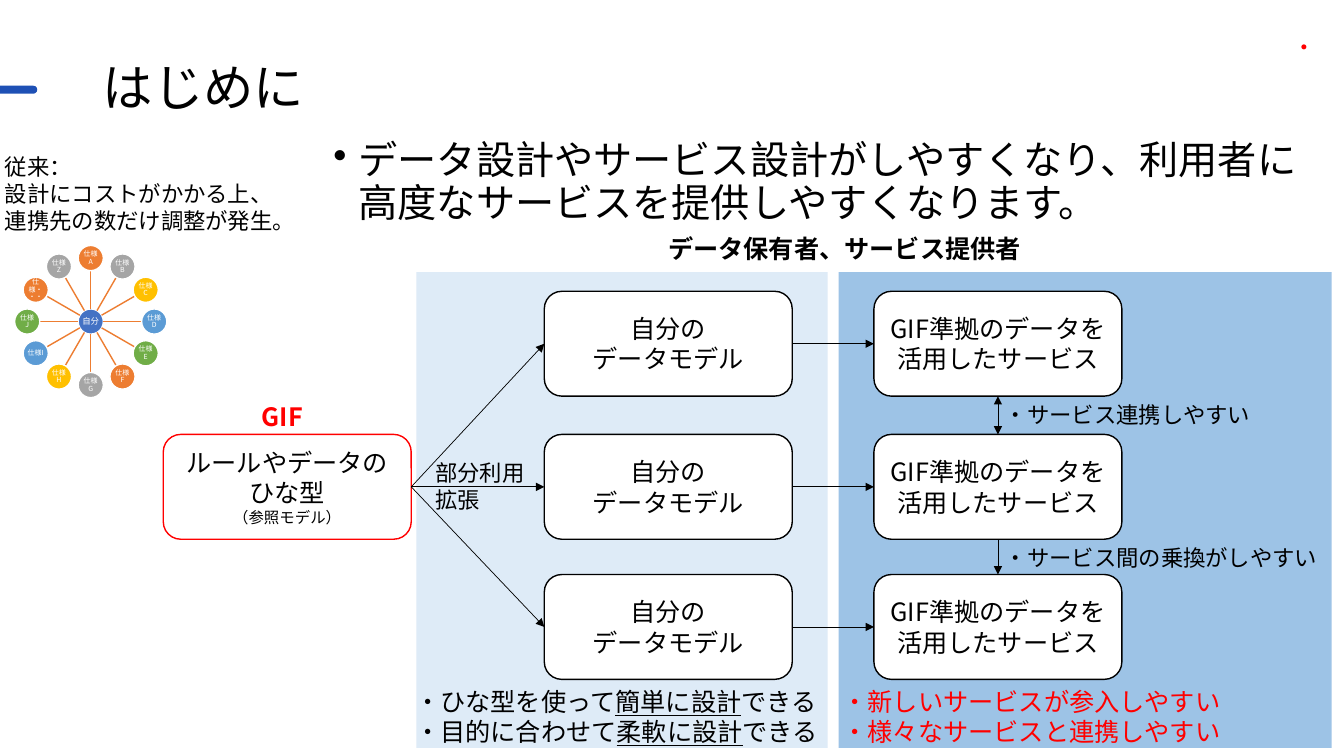
import math
from dataclasses import dataclass

from lxml import etree
from pptx import Presentation
from pptx import util as u
from pptx.dml.color import RGBColor
from pptx.enum import shapes, text
from pptx.oxml.ns import qn

CELL = u.Inches(0.1)
COLUMNS, ROWS = 133.33, 75
SANS, TITLE_FONT = "Noto Sans CJK JP", "Roboto"
COLORS = {
    "black": "000000", "white": "FFFFFF", "red": "FF0000", "accent": "1E50B5",
    "pale": "DEEBF7", "sky": "9DC3E6", "hub": "4472C4", "orange": "ED7D31",
    "gray": "A5A5A5", "gold": "FFC000", "blue": "5B9BD5", "green": "70AD47",
}
SPECS = [
    ("A", "orange"), ("B", "gray"), ("C", "gold"), ("D", "blue"), ("E", "green"), ("F", "orange"),
    ("G", "gray"), ("H", "gold"), ("I", "blue"), ("J", "green"), ("・・・", "orange"), ("Z", "gray"),
]
NODE_WIDTH, NODE_HEIGHT = 24.6, 10.4
NODE_TOPS = (1.9, 16.1, 30)


@dataclass
class Box:
    """Rectangle measured in grid cells."""
    left: float
    top: float
    width: float
    height: float

    def inner(self, left, top, width, height):
        """Return a box offset from this one's corner."""
        return Box(self.left + left, self.top + top, width, height)

    def lengths(self):
        """Return the four lengths in slide units."""
        return [round(value * CELL) for value in (self.left, self.top, self.width, self.height)]


def rgb(name):
    """Look up a palette colour."""
    return RGBColor.from_string(COLORS[name])


def write(shape, paragraphs, size, color="black", bold=False, align=None, font=SANS):
    """Fill a shape with paragraphs; every second run of one is underlined."""
    frame = shape.text_frame
    for index, pieces in enumerate(paragraphs):
        paragraph = frame.add_paragraph() if index else frame.paragraphs[0]
        paragraph.alignment = align
        for order, piece in enumerate(pieces):
            run = paragraph.add_run()
            run.text = piece
            run.font.size = u.Pt(size)
            run.font.bold = bold
            run.font.name = font
            run.font.color.rgb = rgb(color)
            if order % 2:
                run.font.underline = True
            latin = run.font._element.find(qn("a:latin"))
            east_asian = etree.Element(qn("a:ea"), typeface=SANS)
            latin.addnext(east_asian)


def add_label(slide, box, paragraphs, size, wrap=False, **style):
    """Add a text box."""
    label = slide.shapes.add_textbox(*box.lengths())
    label.text_frame.word_wrap = wrap
    if not wrap:
        label.text_frame.auto_size = text.MSO_AUTO_SIZE.SHAPE_TO_FIT_TEXT
    write(label, paragraphs, size, **style)
    return label


def add_block(slide, kind, box, fill, line=None):
    """Add a flat filled shape."""
    shape = slide.shapes.add_shape(kind, *box.lengths())
    shape.shadow.inherit = False
    shape.fill.solid()
    shape.fill.fore_color.rgb = rgb(fill)
    if line:
        shape.line.color.rgb = rgb(line)
        shape.line.width = u.Pt(1)
    else:
        shape.line.fill.background()
    shape.text_frame.word_wrap = True
    shape.text_frame.vertical_anchor = text.MSO_ANCHOR.MIDDLE
    return shape


def add_node(slide, box, lines, line="black"):
    """Add a rounded box with centred lines."""
    node = add_block(slide, shapes.MSO_SHAPE.ROUNDED_RECTANGLE, box, "white", line)
    write(node, [[words] for words in lines], 18, align=text.PP_ALIGN.CENTER)
    return node


def add_line(slide, ends, color, width):
    """Add a straight connector between two points."""
    points = [round(value * CELL) for value in ends]
    line = slide.shapes.add_connector(shapes.MSO_CONNECTOR.STRAIGHT, *points)
    line.line.color.rgb = rgb(color)
    line.line.width = u.Pt(width)
    etree.SubElement(line._element.spPr, qn("a:effectLst"))
    return line


def join(slide, start, start_site, end, end_site, both=False):
    """Link two nodes with an arrow."""
    arrow = add_line(slide, (0, 0, 1, 1), "black", 0.5)
    arrow.begin_connect(start, start_site)
    arrow.end_connect(end, end_site)
    outline = arrow.line._get_or_add_ln()
    for tag in ("a:headEnd", "a:tailEnd") if both else ("a:tailEnd",):
        etree.SubElement(outline, qn(tag), type="triangle")


def add_header(slide, box):
    """Place the title, its accent marks and the key message."""
    bar = add_block(slide, shapes.MSO_SHAPE.ROUNDED_RECTANGLE, box.inner(-1, 8.5, 4.7, 0.8), "accent")
    bar.adjustments[0] = 0.5
    add_block(slide, shapes.MSO_SHAPE.OVAL, box.inner(129.1, 4.4, 0.5, 0.5), "red")
    title = add_label(slide, box.inner(9.2, 5.7, 115, 6.5), [["はじめに"]], 36, wrap=True, font=TITLE_FONT)
    title.text_frame.vertical_anchor = text.MSO_ANCHOR.MIDDLE
    title.text_frame.paragraphs[0].line_spacing = 0.9
    message = add_label(slide, box.inner(32.1, 13.5, 98.8, 6.5), [[
        "データ設計やサービス設計がしやすくなり、利用者に高度なサービスを提供しやすくなります。"]], 28, wrap=True)
    paragraph = message.text_frame.paragraphs[0]
    paragraph.line_spacing = 0.9
    properties = paragraph._p.get_or_add_pPr()
    properties.set("marL", str(u.Inches(0.25)))
    properties.set("indent", str(-u.Inches(0.25)))
    etree.SubElement(properties, qn("a:buChar"), char="•")


def add_dot(slide, x, y, words, fill, size):
    """Add one small labelled circle around a centre."""
    dot = add_block(slide, shapes.MSO_SHAPE.OVAL, Box(x - 1.25, y - 1.25, 2.5, 2.5), fill, "white")
    frame = dot.text_frame
    frame.margin_left = frame.margin_right = frame.margin_top = frame.margin_bottom = 0
    write(dot, [[words]], size, color="white", align=text.PP_ALIGN.CENTER)
    frame.paragraphs[0].line_spacing = 0.9


def add_conventional(slide, box):
    """Place the note on the old way above its wheel of specifications."""
    add_label(slide, box.inner(0, 0, 29.7, 9.1), [
        ["従来："], ["設計にコストがかかる上、連携先の数だけ調整が発生。"]], 16, wrap=True)
    x, y = box.left + 9.5, box.top + 17.2
    add_dot(slide, x, y, "自分", "hub", 6)
    for index, (name, fill) in enumerate(SPECS):
        angle = math.tau * index / len(SPECS)
        across, up = math.sin(angle), -math.cos(angle)
        ends = [x + 1.25 * across, y + 1.25 * up, x + 5.05 * across, y + 5.05 * up]
        add_line(slide, ends, "orange", 1)
        add_dot(slide, x + 6.3 * across, y + 6.3 * up, "仕様" + name, fill, 5)


def add_panel(slide, box, fill, offset, lines):
    """Place a coloured panel with its three nodes and return the nodes."""
    add_block(slide, shapes.MSO_SHAPE.RECTANGLE, box, fill)
    return [add_node(slide, box.inner(offset, top, NODE_WIDTH, NODE_HEIGHT), lines) for top in NODE_TOPS]


def add_diagram(slide, box):
    """Place the reference model, both panels and the arrows between them."""
    services = add_panel(slide, box.inner(67, 4.3, 48.9, 47.2), "sky", 3.5, ["GIF準拠のデータを活用したサービス"])
    models = add_panel(slide, box.inner(25.1, 4.3, 40.8, 47.2), "pale", 12.7, ["自分の", "データモデル"])
    reference = add_node(slide, box.inner(0, 20.4, NODE_WIDTH, NODE_HEIGHT),
                         ["ルールやデータの", "ひな型", "（参照モデル）"], "red")
    reference.text_frame.paragraphs[2].runs[0].font.size = u.Pt(11)
    for model, service in zip(models, services):
        join(slide, reference, 3, model, 1)
        join(slide, model, 3, service, 1)
    join(slide, services[0], 2, services[1], 0, both=True)
    join(slide, services[1], 2, services[2], 0)
    add_label(slide, box.inner(8.8, 16.6, 6.3, 4), [["GIF"]], 18, color="red", bold=True)
    add_label(slide, box.inner(49.1, 0, 37.4, 4), [["データ保有者、サービス提供者"]], 18, bold=True)
    add_label(slide, box.inner(26, 22.4, 11, 6.4), [["部分利用"], ["拡張"]], 16)
    add_label(slide, box.inner(82.5, 16.6, 26.7, 3.7), [["・サービス連携しやすい"]], 16)
    add_label(slide, box.inner(82.5, 30.8, 33.4, 3.7), [["・サービス間の乗換がしやすい"]], 16)
    add_label(slide, box.inner(24, 44.9, 42.4, 7.1), [
        ["・ひな型を使って", "簡単に設計", "できる"], ["・目的に合わせて", "柔軟に設計", "できる"]], 18)
    add_label(slide, box.inner(66.4, 44.9, 39.9, 7.1), [
        ["・新しいサービスが参入しやすい"], ["・様々なサービスと連携しやすい"]], 18, color="red")


def main():
    """Build and save the slide."""
    presentation = Presentation()
    presentation.slide_width = round(COLUMNS * CELL)
    presentation.slide_height = ROWS * CELL
    slide = presentation.slides.add_slide(presentation.slide_layouts[6])
    add_header(slide, Box(0, 0, COLUMNS, 20))
    add_diagram(slide, Box(16.2, 22.7, 115.9, 52))
    add_conventional(slide, Box(-0.5, 14.7, 29.7, 24.8))
    presentation.save("out.pptx")


if __name__ == "__main__":
    main()
